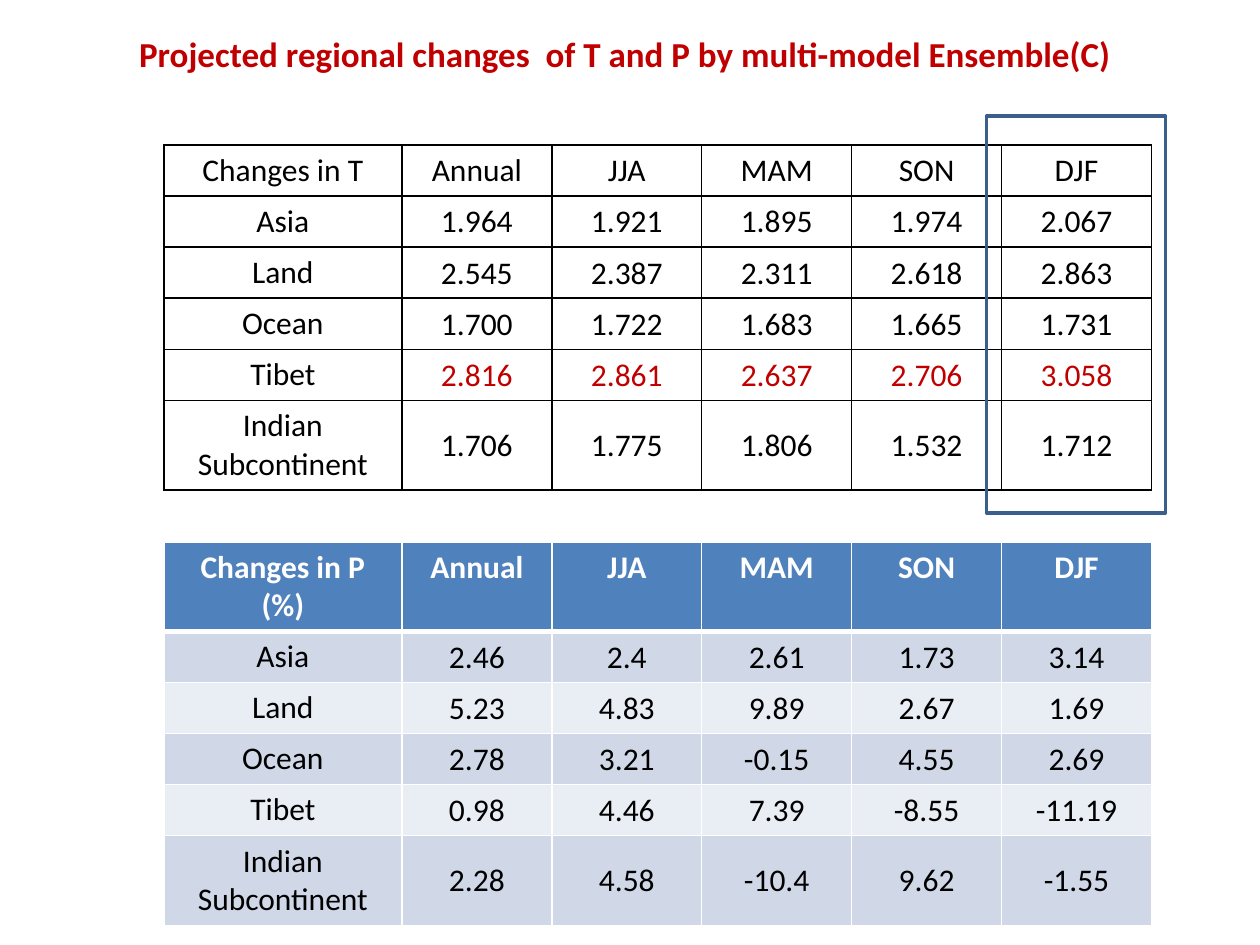
import pptx
import pptx.dml.color
import pptx.enum.shapes
import pptx.enum.text
import pptx.oxml.ns
import pptx.util
from lxml import etree
from pptx.dml.color import RGBColor
from pptx.util import Inches

FONT = "Calibri"
RED = RGBColor(0xC0, 0x00, 0x00)
BLACK = RGBColor(0x00, 0x00, 0x00)
WHITE = RGBColor(0xFF, 0xFF, 0xFF)
HEADER_BLUE = RGBColor(0x4F, 0x81, 0xBD)
BAND_DARK = RGBColor(0xD0, 0xD8, 0xE8)
BAND_LIGHT = RGBColor(0xE9, 0xED, 0xF4)
OUTLINE_BLUE = RGBColor(0x3A, 0x5F, 0x8C)

SEASONS = ["Annual", "JJA", "MAM", "SON", "DJF"]
TEMPERATURE_ROWS = [
    ["Changes in T", *SEASONS],
    ["Asia", "1.964", "1.921", "1.895", "1.974", "2.067"],
    ["Land", "2.545", "2.387", "2.311", "2.618", "2.863"],
    ["Ocean", "1.700", "1.722", "1.683", "1.665", "1.731"],
    ["Tibet", "2.816", "2.861", "2.637", "2.706", "3.058"],
    ["Indian Subcontinent", "1.706", "1.775", "1.806", "1.532", "1.712"],
]
PRECIPITATION_ROWS = [
    ["Changes in P (%)", *SEASONS],
    ["Asia", "2.46", "2.4", "2.61", "1.73", "3.14"],
    ["Land", "5.23", "4.83", "9.89", "2.67", "1.69"],
    ["Ocean", "2.78", "3.21", "-0.15", "4.55", "2.69"],
    ["Tibet", "0.98", "4.46", "7.39", "-8.55", "-11.19"],
    ["Indian Subcontinent", "2.28", "4.58", "-10.4", "9.62", "-1.55"],
]
LABEL_WIDTH = Inches(1.89)
VALUE_WIDTH = Inches(1.19)
ROW_HEIGHT = Inches(0.4)


def write_text(text_frame, text, size=18, color=BLACK, bold=False):
    """Write one centred paragraph."""
    paragraph = text_frame.paragraphs[0]
    paragraph.alignment = pptx.enum.text.PP_ALIGN.CENTER
    run = paragraph.add_run()
    run.text = text
    run.font.name = FONT
    run.font.size = pptx.util.Pt(size)
    run.font.bold = bold
    run.font.color.rgb = color


def set_borders(cell, color, bottom_width=1):
    """Draw the four sides of a cell; the lines come before its fill."""
    properties = cell._tc.get_or_add_tcPr()
    widths = {"a:lnL": 1, "a:lnR": 1, "a:lnT": 1, "a:lnB": bottom_width}
    for position, (tag, width) in enumerate(widths.items()):
        line = etree.Element(pptx.oxml.ns.qn(tag), w=str(pptx.util.Pt(width)))
        fill = etree.SubElement(line, pptx.oxml.ns.qn("a:solidFill"))
        etree.SubElement(fill, pptx.oxml.ns.qn("a:srgbClr"), val=str(color))
        properties.insert(position, line)


def add_title(slide, left, top, width, height):
    title = slide.shapes.title
    title.left, title.top, title.width, title.height = left, top, width, height
    title.text_frame.word_wrap = False
    title.text_frame.vertical_anchor = pptx.enum.text.MSO_ANCHOR.TOP
    write_text(title.text_frame,
               "Projected regional changes  of T and P by multi-model Ensemble(C)",
               size=20, color=RED, bold=True)


def add_change_table(slide, left, top, rows, border, header_fill=None,
                     band_fills=(None,), header_color=BLACK, header_bold=False,
                     header_line=1, highlighted_region=None):
    """Place a table of regions by season with its corner at left, top."""
    column_count = len(rows[0])
    width = LABEL_WIDTH + VALUE_WIDTH * (column_count - 1)
    table = slide.shapes.add_table(len(rows), column_count, left, top, width,
                                   ROW_HEIGHT * len(rows)).table
    for index, column in enumerate(table.columns):
        column.width = VALUE_WIDTH if index else LABEL_WIDTH

    for row_index, values in enumerate(rows):
        is_header = row_index == 0
        fill = header_fill if is_header else band_fills[(row_index - 1) % len(band_fills)]
        for column_index, value in enumerate(values):
            cell = table.cell(row_index, column_index)
            is_value = not is_header and column_index > 0
            color = header_color if is_header else BLACK
            if is_value:
                cell.vertical_anchor = pptx.enum.text.MSO_ANCHOR.MIDDLE
                cell.margin_left = cell.margin_right = cell.margin_top = Inches(0.01)
                cell.margin_bottom = 0
                if values[0] == highlighted_region:
                    color = RED
            if fill is None:
                cell.fill.background()
            else:
                cell.fill.solid()
                cell.fill.fore_color.rgb = fill
            # Neighbouring cells share the thicker line under the header
            set_borders(cell, border, header_line if is_header else 1)
            write_text(cell.text_frame, value, color=color,
                       bold=is_header and header_bold)


def add_column_frame(slide, left, top, width, height):
    frame = slide.shapes.add_shape(pptx.enum.shapes.MSO_SHAPE.RECTANGLE,
                                   left, top, width, height)
    frame.shadow.inherit = False
    frame.fill.background()
    frame.line.color.rgb = OUTLINE_BLUE
    frame.line.width = pptx.util.Pt(2)


def main():
    presentation = pptx.Presentation()
    presentation.slide_width = Inches(10)
    presentation.slide_height = Inches(7.5)
    title_only = presentation.slide_layouts[5]
    slide = presentation.slides.add_slide(title_only)

    add_title(slide, Inches(0.94), Inches(0.21), Inches(8.04), Inches(0.44))
    # Precipitation changes, banded
    add_change_table(slide, Inches(1.3), Inches(4.3), PRECIPITATION_ROWS, WHITE,
                     header_fill=HEADER_BLUE, band_fills=(BAND_DARK, BAND_LIGHT),
                     header_color=WHITE, header_bold=True, header_line=3)
    # Temperature changes, plain grid
    add_change_table(slide, Inches(1.3), Inches(1.15), TEMPERATURE_ROWS, BLACK,
                     highlighted_region="Tibet")
    # Frame around the winter column
    add_column_frame(slide, Inches(7.83), Inches(0.92), Inches(1.42), Inches(3.15))

    presentation.save("out.pptx")


if __name__ == "__main__":
    main()
